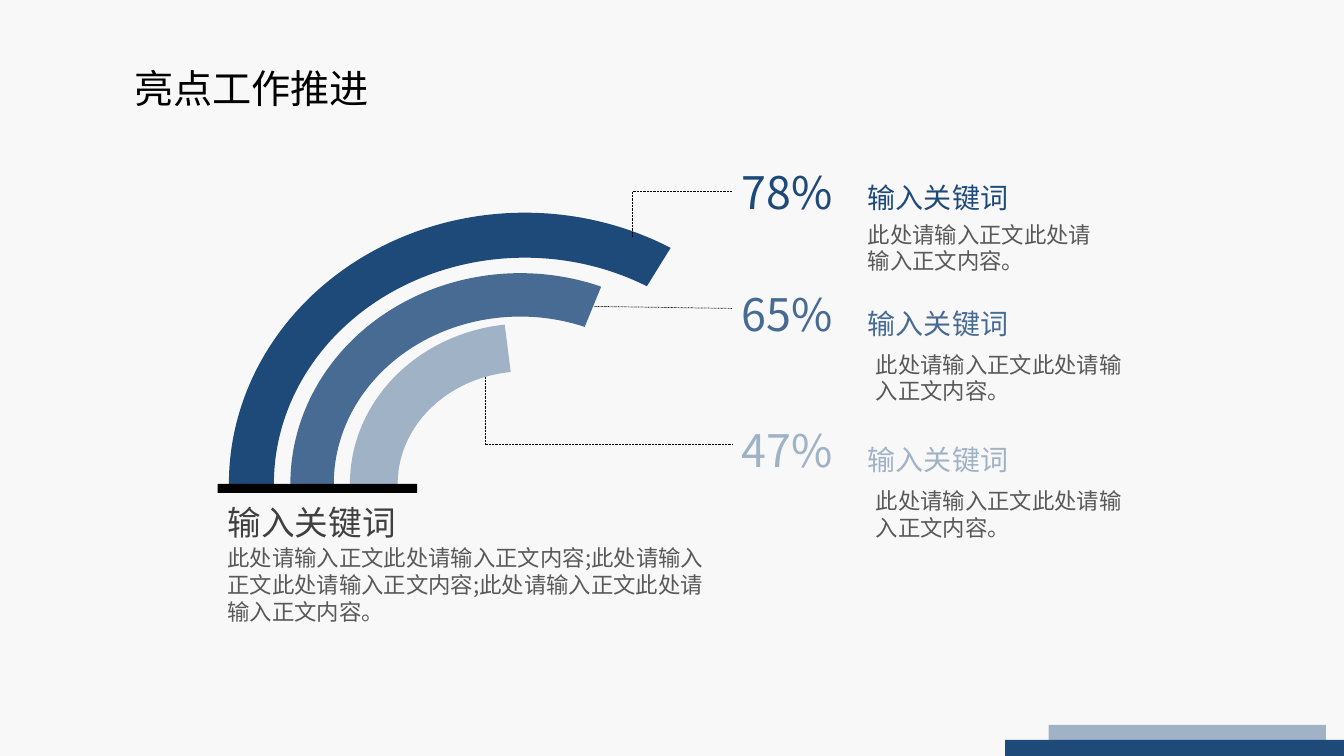
from lxml.etree import SubElement
from pptx import Presentation
from pptx.dml.color import RGBColor
from pptx.enum.dml import MSO_LINE
from pptx.enum.shapes import MSO_CONNECTOR, MSO_SHAPE
from pptx.enum.text import MSO_ANCHOR, MSO_AUTO_SIZE, PP_ALIGN
from pptx.oxml.ns import qn
from pptx.util import Inches, Pt

FONT = "Noto Sans CJK SC"
PAPER = RGBColor(0xF8, 0xF8, 0xF8)
BLACK = RGBColor(0, 0, 0)
NAVY = RGBColor(0x1E, 0x4A, 0x7A)
STEEL = RGBColor(0x47, 0x6B, 0x92)
MIST = RGBColor(0xA0, 0xB2, 0xC5)
DARK_GREY = RGBColor(0x40, 0x40, 0x40)
GREY = RGBColor(0x59, 0x59, 0x59)

WIDTH, HEIGHT = Inches(13.33), Inches(7.5)
BASE_Y = 64  # the arcs stand on this line
PERCENT_X, KEYWORD_X = 54.46, 63.84

KEYWORD = "输入关键词"
BODY = "此处请输入正文此处请输入正文内容。"
SUMMARY = "此处请输入正文此处请输入正文内容;此处请输入正文此处请输入正文内容;此处请输入正文此处请输入正文内容。"

# Centre x, width, height, end angle in degrees, thickness, colour
ARCS = [
    (39.05, 44.04, 71.73, 301.7, 0.083, NAVY),
    (38.71, 34.21, 55.73, 292.31, 0.103, STEEL),
    (39.05, 26.03, 42.4, 262.8, 0.149, MIST),
]
# Value, colour, tops of value, keyword and body, body left and width
CALLOUTS = [
    ("78%", NAVY, 21.07, 23.2, 28.53, KEYWORD_X, 18.98),
    ("65%", STEEL, 37.33, 39.87, 45.73, 64.44, 20.78),
    ("47%", MIST, 55.2, 57.87, 63.73, 64.44, 20.78),
]


def across(share):
    """Percent of the slide width."""
    return round(WIDTH * share / 100)


def down(share):
    """Percent of the slide height."""
    return round(HEIGHT * share / 100)


def box(x, y, w, h):
    return across(x), down(y), across(w), down(h)


def format_text(sp, text, size, color, align=PP_ALIGN.LEFT):
    tf = sp.text_frame
    tf.text = text
    tf.word_wrap = True
    tf.auto_size = MSO_AUTO_SIZE.SHAPE_TO_FIT_TEXT
    tf.vertical_anchor = MSO_ANCHOR.TOP
    p = tf.paragraphs[0]
    p.alignment = align
    r = p.runs[0]
    r.font.size = Pt(size)
    r.font.color.rgb = color
    r.font.name = FONT
    SubElement(r.font._element, qn("a:ea"), typeface=FONT)


def add_text(s, place, text, size, color):
    format_text(s.shapes.add_textbox(*place), text, size, color)


def add_block(s, kind, place, color):
    sp = s.shapes.add_shape(kind, *place)
    sp.shadow.inherit = False
    sp.fill.solid()
    sp.fill.fore_color.rgb = color
    sp.line.fill.background()
    return sp


def add_arc(s, center_x, w, h, end_angle, thickness, color):
    place = box(center_x - w / 2, BASE_Y - h / 2, w, h)
    sp = add_block(s, MSO_SHAPE.BLOCK_ARC, place, color)
    # Angles count in 60000ths of a degree, adjustments in 100000ths
    sp.adjustments[0] = 180 * 0.6
    sp.adjustments[1] = end_angle * 0.6
    sp.adjustments[2] = thickness


def add_leader(s, x, y, end_y, kind=MSO_CONNECTOR.ELBOW):
    line = s.shapes.add_connector(
        kind, across(x), down(y), across(PERCENT_X), down(end_y))
    line.line.color.rgb = BLACK
    line.line.width = Pt(0.5)
    line.line.dash_style = MSO_LINE.ROUND_DOT
    props = line._element.spPr
    SubElement(props, qn("a:effectLst"))
    if kind == MSO_CONNECTOR.ELBOW:  # turn right at the start
        guides = props.find(qn("a:prstGeom")).find(qn("a:avLst"))
        SubElement(guides, qn("a:gd"), name="adj1", fmla="val 0")


def add_callout(s, value, color, value_y, keyword_y, body_y, body_x, body_w):
    add_text(s, box(PERCENT_X, value_y, 9.98, 8.53), value, 32, color)
    add_text(s, box(KEYWORD_X, keyword_y, 12.6, 6.4), KEYWORD, 20, color)
    add_text(s, box(body_x, body_y, body_w, 8.53), BODY, 16, GREY)


def main():
    prs = Presentation()
    prs.slide_width, prs.slide_height = WIDTH, HEIGHT
    s = prs.slides.add_slide(prs.slide_layouts[5])
    s.background.fill.solid()
    s.background.fill.fore_color.rgb = PAPER

    # Title
    title = s.shapes.title
    title.left, title.top, title.width, title.height = box(9.23, 7.87, 24.46, 7.6)
    format_text(title, "亮点工作推进", 28, BLACK, PP_ALIGN.JUSTIFY)

    # Arcs on their base line; the inner leader starts behind its arc
    add_leader(s, 36.08, 48.93, 58.8)
    for arc in ARCS:
        add_arc(s, *arc)
    add_block(s, MSO_SHAPE.RECTANGLE, box(16.2, BASE_Y, 14.85, 1.2), BLACK)
    add_leader(s, 47.04, 31.33, 25.33)
    add_leader(s, 44.19, 40.53, 40.8, MSO_CONNECTOR.STRAIGHT)

    # Summary below the arcs
    add_text(s, box(16.2, 65.73, 15.45, 6.67), KEYWORD, 24, DARK_GREY)
    add_text(s, box(16.2, 71.33, 38.26, 12.13), SUMMARY, 16, GREY)

    # Callouts on the right
    for callout in CALLOUTS:
        add_callout(s, *callout)

    # Corner bars
    add_block(s, MSO_SHAPE.RECTANGLE, box(78.02, 95.87, 20.63, 4.13), MIST)
    add_block(s, MSO_SHAPE.RECTANGLE, box(74.79, 97.87, 25.21, 2.13), NAVY)

    prs.save("out.pptx")


if __name__ == "__main__":
    main()
